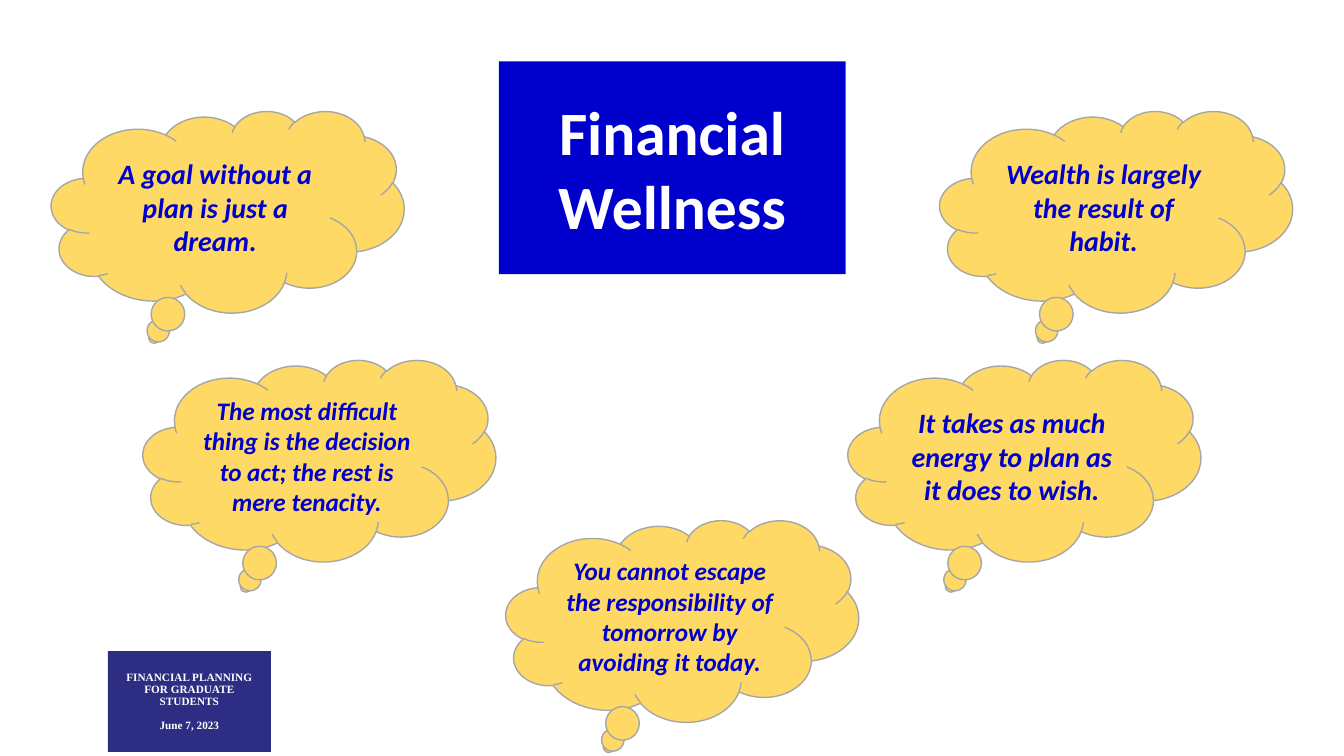
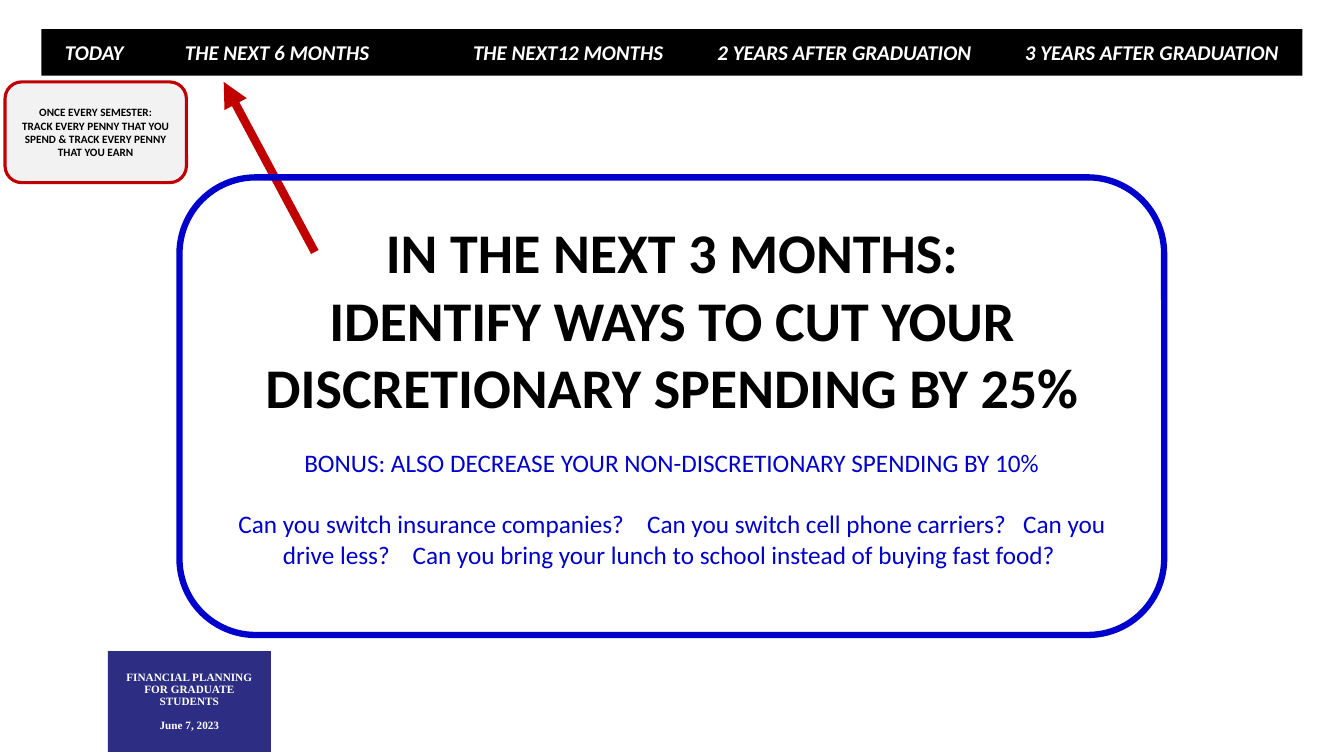
from dataclasses import dataclass
from lxml import etree
from pptx import Presentation
from pptx.dml.color import RGBColor
from pptx.enum import shapes, text
from pptx.oxml import ns
from pptx.util import Pt


# Theme
@dataclass(frozen=True)
class Theme:
    blue: str = "0000CC"
    navy: str = "2D2D83"
    gold: str = "FFD966"
    gray: str = "A6A6A6"
    pale: str = "F2F2F2"
    red: str = "C00000"
    black: str = "000000"
    white: str = "FFFFFF"
    sans: str = "Calibri"
    serif: str = "Times New Roman"
    hero: int = 44
    headline: int = 40
    quote: int = 20
    body: int = 18
    timeline: int = 15
    small: int = 8


THEME = Theme()
PAGE_WIDTH, PAGE_HEIGHT = 960, 540
SHAPE = shapes.MSO_SHAPE

# Content
BADGE = ["FINANCIAL PLANNING FOR GRADUATE STUDENTS", "June 7, 2023"]
HERO = "Financial Wellness"
CLOUD_WIDTH, CLOUD_HEIGHT = 252, 144
OUTER, INNER = 36.7, 102.2
UPPER, LOWER = 79.2, 257


def mirrored(left):
    return PAGE_WIDTH - left - CLOUD_WIDTH


QUOTES = [  # left, top, size, words
    (OUTER, UPPER, THEME.quote, "A goal without a plan is just a dream."),
    (INNER, LOWER, THEME.body,
     "The most difficult thing is the decision to act; the rest is mere tenacity."),
    (mirrored(OUTER), UPPER, THEME.quote, "Wealth is largely the result of habit."),
    (mirrored(INNER), LOWER, THEME.quote,
     "It takes as much energy to plan as it does to wish."),
    (361.4, 371.5, THEME.body,
     "You cannot escape the responsibility of tomorrow by avoiding it today."),
]
TIMELINE = [  # left edge on the page, label
    (46.4, "TODAY"),
    (132.1, "THE NEXT 6 MONTHS"),
    (337.9, "THE NEXT12 MONTHS"),
    (512.5, "2 YEARS AFTER GRADUATION"),
    (732.1, "3 YEARS AFTER GRADUATION"),
]
REMINDER = ["ONCE EVERY SEMESTER:",
            "TRACK EVERY PENNY THAT YOU SPEND & TRACK EVERY PENNY THAT YOU EARN"]
HEADLINE = ["IN THE NEXT 3 MONTHS:",
            "IDENTIFY WAYS TO CUT YOUR DISCRETIONARY SPENDING BY 25%"]
BONUS = "BONUS: ALSO DECREASE YOUR NON-DISCRETIONARY SPENDING BY 10%"
QUESTIONS = [  # question, extra width of the space after it
    ("Can you switch insurance companies?", 12.2),
    ("Can you switch cell phone carriers?", 8.1),
    ("Can you drive less?", 12.2),
    ("Can you bring your lunch to school instead of buying fast food?", 12.2),
]


# Helpers
def add_xml(parent, tag, **attributes):
    return etree.SubElement(parent, ns.qn(tag), attributes)


def paint(shape, fill=None, line=None, width=1):
    if fill:
        shape.fill.solid()
        shape.fill.fore_color.rgb = RGBColor.from_string(fill)
    else:
        shape.fill.background()
    if line:
        shape.line.color.rgb = RGBColor.from_string(line)
        shape.line.width = Pt(width)
    else:
        shape.line.fill.background()


def add_box(page, kind, place, **look):
    box = page.shapes.add_shape(kind, *map(Pt, place))
    box.shadow.inherit = False
    paint(box, **look)
    return box


def move(shape, place):
    shape.left, shape.top, shape.width, shape.height = map(Pt, place)


def write(shape, paragraphs, size, color, font=THEME.sans, bold=True, italic=False,
          gap=0, spacing=1.0, anchor=text.MSO_ANCHOR.MIDDLE, inset=None):
    """Each paragraph is a string or a list of (words, letter spacing) spans."""
    frame = shape.text_frame
    frame.word_wrap = True
    frame.auto_size = text.MSO_AUTO_SIZE.NONE
    frame.vertical_anchor = anchor
    if inset is not None:
        frame.margin_left = frame.margin_right = Pt(inset)
        frame.margin_top = frame.margin_bottom = Pt(inset)
    for index, spans in enumerate(paragraphs):
        para = frame.add_paragraph() if index else frame.paragraphs[0]
        para.alignment = text.PP_ALIGN.CENTER
        para.line_spacing = spacing
        para.space_before = Pt(gap if index else 0)
        for words, tracking in [(spans, 0)] if isinstance(spans, str) else spans:
            span = para.add_run()
            span.text = words
            span.font.name, span.font.size = font, Pt(size)
            span.font.bold, span.font.italic = bold, italic
            span.font.color.rgb = RGBColor.from_string(color)
            if tracking:
                span.font._element.set("spc", str(round(tracking * 100)))
    return frame


def add_badge(deck, page):
    """Make the footer badge and place it on the master for every slide."""
    badge = add_box(page, SHAPE.RECTANGLE, (77, 465.1, 116.6, 72), fill=THEME.navy)
    write(badge, BADGE, THEME.small, THEME.white, THEME.serif, gap=8.3, spacing=0.9)
    badge._element.nvSpPr.cNvPr.set("id", "20")
    deck.slide_master.shapes._spTree.append(badge._element)


def build_quotes(page):
    # Title as a rounded block
    title = page.shapes.title
    move(title, (356.4, 43.9, 247.7, 151.9))
    outline = add_xml(title._element.spPr, "a:prstGeom", prst="roundRect")
    add_xml(outline, "a:avLst")
    paint(title, fill=THEME.blue)
    write(title, [HERO], THEME.hero, THEME.white)

    # Quote clouds
    for left, top, size, words in QUOTES:
        cloud = add_box(page, SHAPE.CLOUD_CALLOUT, (left, top, CLOUD_WIDTH, CLOUD_HEIGHT),
                        fill=THEME.gold, line=THEME.gray)
        write(cloud, [words], size, THEME.blue, italic=True)


def build_timeline(page):
    bar_left = 29.5
    bar = add_box(page, SHAPE.RECTANGLE, (bar_left, 20.9, 900.7, 33.1), fill=THEME.black)
    frame = write(bar, ["\t".join(label for _, label in TIMELINE)],
                  THEME.timeline, THEME.white, italic=True, inset=0)
    start = TIMELINE[0][0]
    frame.margin_left = Pt(start - bar_left)
    para = frame.paragraphs[0]
    para.alignment = text.PP_ALIGN.LEFT
    stops = add_xml(para._p.get_or_add_pPr(), "a:tabLst")
    for left, _ in TIMELINE[1:]:
        add_xml(stops, "a:tab", pos=str(int(Pt(left - start))), algn="l")


def build_goal(page):
    build_timeline(page)

    # Reminder card
    card = add_box(page, SHAPE.ROUNDED_RECTANGLE, (3.6, 58.5, 129.6, 72),
                   fill=THEME.pale, line=THEME.red, width=2.25)
    write(card, REMINDER, THEME.small, THEME.black)

    # Arrow to the timeline
    arrow = page.shapes.add_connector(shapes.MSO_CONNECTOR.STRAIGHT,
                                      *map(Pt, (224.9, 180, 159.8, 58.5)))
    arrow.line.color.rgb = RGBColor.from_string(THEME.red)
    arrow.line.width = Pt(6)
    add_xml(arrow.line._get_or_add_ln(), "a:tailEnd", type="triangle")
    add_xml(arrow._element.spPr, "a:effectLst")

    # Goal panel with headline and suggestions
    add_box(page, SHAPE.ROUNDED_RECTANGLE, (128.2, 126.7, 703.4, 326.9),
            line=THEME.blue, width=4.5)
    text_left, text_width = 151.4, 657
    title, body = page.shapes.title, page.placeholders[1]
    move(title, (text_left, 155.7, text_width, 147))
    write(title, HEADLINE, THEME.headline, THEME.black,
          anchor=text.MSO_ANCHOR.TOP, inset=0)
    move(body, (text_left, 319.7, text_width, 90))
    questions = [span for words, extra in QUESTIONS for span in ((words, 0), (" ", extra))]
    frame = write(body, [BONUS, questions], THEME.body, THEME.blue, bold=False,
                  gap=22, anchor=text.MSO_ANCHOR.TOP, inset=0)
    for para in frame.paragraphs:
        layout = para._p.get_or_add_pPr()
        layout.set("marL", "0")
        layout.set("indent", "0")
        add_xml(layout, "a:buNone")


def main():
    deck = Presentation()
    deck.slide_width, deck.slide_height = Pt(PAGE_WIDTH), Pt(PAGE_HEIGHT)
    title_only, title_and_body = deck.slide_layouts[5], deck.slide_layouts[1]
    quotes_page = deck.slides.add_slide(title_only)
    add_badge(deck, quotes_page)
    build_quotes(quotes_page)
    build_goal(deck.slides.add_slide(title_and_body))
    deck.save("out.pptx")


if __name__ == "__main__":
    main()
